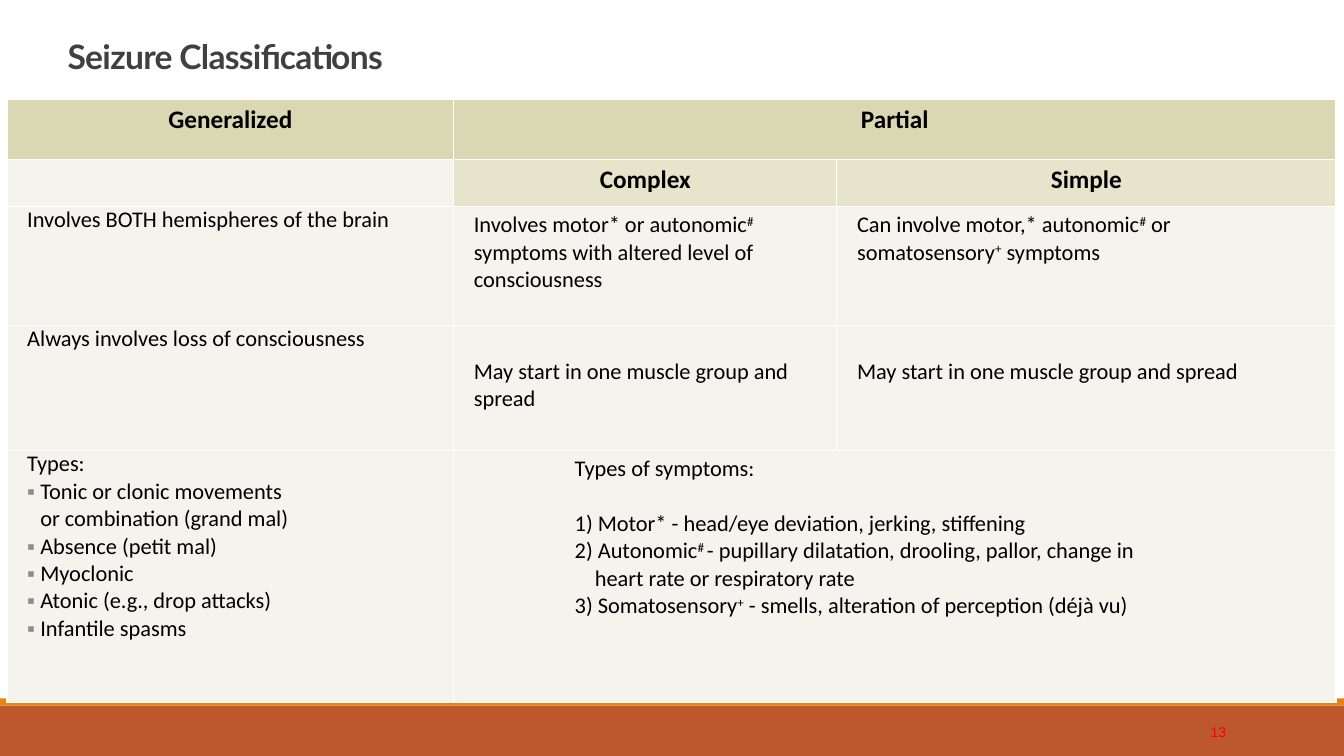
from lxml import etree
from pptx import Presentation
from pptx.dml.color import RGBColor
from pptx.enum.shapes import MSO_SHAPE
from pptx.enum.text import MSO_ANCHOR as ANCHOR, MSO_AUTO_SIZE as AUTO, PP_ALIGN as ALIGN
from pptx.oxml.ns import qn
from pptx.util import Inches, Pt

COLORS = {
    "white": "FFFFFF", "black": "000000", "title": "404040", "number": "FF0000",
    "footer": "BD582C", "stripe": "E48312", "head": "DAD7B3",
    "subhead": "E7E4CC", "body": "F4F3ED", "bullet": "8C8C8C",
}
COL_WIDTHS = [4.43, 3.8, 4.95]
ROW_HEIGHTS = [0.59, 0.47, 1.18, 1.24, 2.5]
SPREAD = "May start in one muscle group and spread"
GENERALIZED_TYPES = [
    "Tonic or clonic movements\nor combination (grand mal)", "Absence (petit mal)",
    "Myoclonic", "Atonic (e.g., drop attacks)", "Infantile spasms",
]
SYMPTOM_TYPES = [
    "1) Motor* - head/eye deviation, jerking, stiffening",
    "2) Autonomic^# ^- pupillary dilatation, drooling, pallor, change in\n"
    "heart rate or respiratory rate",
    "3) Somatosensory^+^ - smells, alteration of perception (déjà vu)",
]


def rgb(name):
    return RGBColor.from_string(COLORS[name])


def style(font, size, color, name="Calibri", bold=False):
    font.size, font.name, font.bold = Pt(size), name, bold
    font.color.rgb = rgb(color)


def add_runs(p, text, size=16, bold=False):
    """Text between carets is superscript; a newline is a line break."""
    for i, part in enumerate(text.split("^")):
        for j, line in enumerate(part.split("\n")):
            if j:
                p.add_line_break()
            r = p.add_run()
            r.text = line
            style(r.font, size, "black", bold=bold)
            if i % 2:
                r.font._element.set("baseline", "30000")


def set_indent(p, left, hanging):
    pPr = p._p.get_or_add_pPr()
    pPr.set("marL", str(Inches(left)))
    pPr.set("indent", str(-Inches(hanging)))
    return pPr


def set_bullet(p):
    pPr = set_indent(p, 0.13, 0.13)
    color = etree.SubElement(pPr, qn("a:buClr"))
    etree.SubElement(color, qn("a:srgbClr"), val=COLORS["bullet"])
    etree.SubElement(pPr, qn("a:buFont"), typeface="Arial")
    etree.SubElement(pPr, qn("a:buChar"), char="▪")


def format_cell(cell, fill):
    tcPr = cell._tc.get_or_add_tcPr()
    for side in ("lnL", "lnR", "lnT", "lnB"):
        ln = etree.SubElement(tcPr, qn(f"a:{side}"), w=str(Pt(1)))
        solid = etree.SubElement(ln, qn("a:solidFill"))
        etree.SubElement(solid, qn("a:srgbClr"), val=COLORS["white"])
    cell.fill.solid()
    cell.fill.fore_color.rgb = rgb(fill)


def fill_header(cell, text):
    p = cell.text_frame.paragraphs[0]
    p.alignment = ALIGN.CENTER
    add_runs(p, text, 18, True)


def fill_body(cell, text, top=0.05):
    cell.margin_left = cell.margin_right = Inches(0.2)
    cell.margin_top = Inches(top)
    p = cell.text_frame.paragraphs[0]
    add_runs(p, text)
    return p


def add_footer(slide, x, y, w, h):
    # Bands
    stripe = 0.07
    for top, height, color in ((y + stripe, h - stripe, "footer"), (y, stripe, "stripe")):
        sp = slide.shapes.add_shape(MSO_SHAPE.RECTANGLE, Inches(x), Inches(top),
                                    Inches(w), Inches(height))
        sp.shadow.inherit = False
        sp.fill.solid()
        sp.fill.fore_color.rgb = rgb(color)
        sp.line.fill.background()
    # Page number
    box = slide.shapes.add_textbox(Inches(x + w - 2.5), Inches(y + 0.13),
                                   Inches(1.43), Inches(0.4))
    tf = box.text_frame
    tf.word_wrap = True
    tf.vertical_anchor = ANCHOR.MIDDLE
    p = tf.paragraphs[0]
    p.alignment = ALIGN.RIGHT
    r = p.add_run()
    r.text = "13"
    style(r.font, 10, "number", "Arial")


def add_title(slide, x, y, w, h):
    title = slide.shapes.title
    title.left, title.top, title.width, title.height = map(Inches, (x, y, w, h))
    tf = title.text_frame
    tf.auto_size = AUTO.NONE
    tf.vertical_anchor = ANCHOR.BOTTOM
    p = tf.paragraphs[0]
    p.alignment = ALIGN.LEFT
    p.line_spacing = 0.85
    r = p.add_run()
    r.text = "Seizure Classifications"
    style(r.font, 24, "title", "Lato", True)
    r.font._element.set("spc", "-50")


def add_classification_table(slide, x, y, w, h):
    table = slide.shapes.add_table(len(ROW_HEIGHTS), len(COL_WIDTHS), Inches(x), Inches(y),
                                   Inches(w), Inches(h)).table
    table.first_row = table.horz_banding = False
    for col, width in zip(table.columns, COL_WIDTHS):
        col.width = Inches(width)
    for row, height in zip(table.rows, ROW_HEIGHTS):
        row.height = Inches(height)
    for i, row in enumerate(table.rows):
        for j, cell in enumerate(row.cells):
            format_cell(cell, "head" if i == 0 else "subhead" if i == 1 and j else "body")
    for i in (0, 4):
        table.cell(i, 1).merge(table.cell(i, 2))

    # Headings
    fill_header(table.cell(0, 0), "Generalized")
    fill_header(table.cell(0, 1), "Partial")
    fill_header(table.cell(1, 1), "Complex")
    fill_header(table.cell(1, 2), "Simple")

    # Features
    fill_body(table.cell(2, 0), "Involves BOTH hemispheres of the brain", 0)
    fill_body(table.cell(2, 1), "Involves motor* or autonomic^#^ symptoms with altered "
                                "level of consciousness")
    fill_body(table.cell(2, 2), "Can involve motor,* autonomic^#^ or somatosensory^+^ symptoms")
    fill_body(table.cell(3, 0), "Always involves loss of consciousness", 0)
    for j in (1, 2):
        fill_body(table.cell(3, j), SPREAD, 0.32)

    # Types of generalized seizure
    cell = table.cell(4, 0)
    fill_body(cell, "Types:", 0)
    for text in GENERALIZED_TYPES:
        p = cell.text_frame.add_paragraph()
        set_bullet(p)
        add_runs(p, text)

    # Types of partial symptom
    cell = table.cell(4, 1)
    set_indent(fill_body(cell, "Types of symptoms:"), 1, 0)
    for i, text in enumerate(SYMPTOM_TYPES):
        p = cell.text_frame.add_paragraph()
        set_indent(p, 1.2, 0.2)
        if i == 0:
            p.space_before = Pt(19.5)
        add_runs(p, text)


def main():
    prs = Presentation()
    prs.slide_width, prs.slide_height = Inches(13.33), Inches(7.5)
    slide = prs.slides.add_slide(prs.slide_layouts[5])
    add_footer(slide, 0, 6.93, 13.33, 0.57)
    add_title(slide, 0.57, 0.13, 11, 0.68)
    add_classification_table(slide, 0.07, 0.99, sum(COL_WIDTHS), sum(ROW_HEIGHTS))
    prs.save("out.pptx")


if __name__ == "__main__":
    main()
